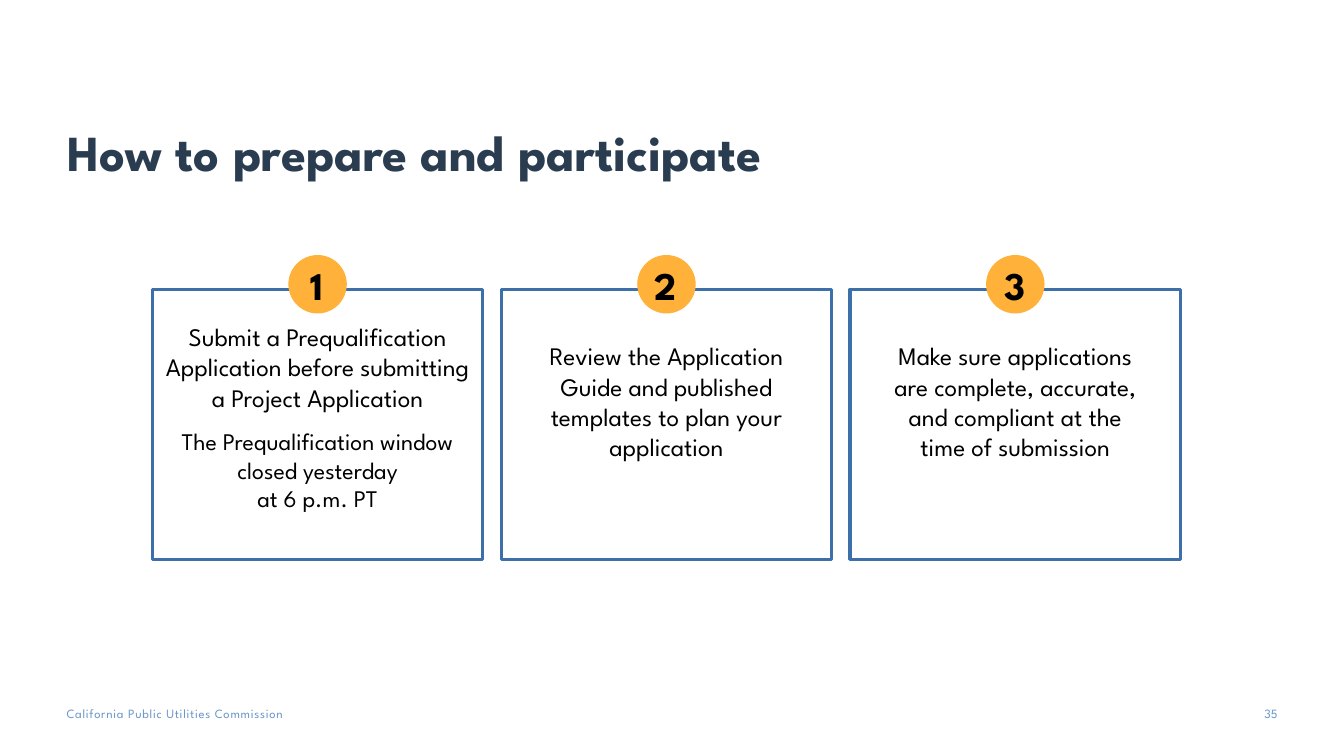
from pptx import Presentation
from pptx import util as u
from pptx.dml import color
from pptx.enum import shapes, text

FONT = "League Spartan"
STEPS = [
    (0, 3.14, 3.28, 2.37, [
        ("Submit a Prequalification Application before submitting a Project Application", 18, 0),
        ("The Prequalification window closed yesterday", 17, 10.5),
        ("at 6 p.m. PT", 17, 0)]),
    (0.28, 3.33, 2.72, 1.62, [
        ("Review the Application Guide and published templates to plan your application", 18, 0)]),
    (0.28, 3.33, 2.72, 1.92, [
        ("Make sure applications are complete, accurate, and compliant at the time of submission", 18, 0)]),
]


def rgb(code):
    return color.RGBColor.from_string(code)


def place(item, box):
    item.left, item.top, item.width, item.height = map(u.Inches, box)


def write(item, lines, tint, align, pads, bold=False):
    frame = item.text_frame
    frame.word_wrap = True
    frame.auto_size = text.MSO_AUTO_SIZE.NONE
    (frame.margin_left, frame.margin_top,
     frame.margin_right, frame.margin_bottom) = map(u.Inches, pads)
    frame.text = "\n".join(line for line, size, gap in lines)
    for par, (line, size, gap) in zip(frame.paragraphs, lines):
        par.alignment = align
        par.space_before = u.Pt(gap)
        for run in par.runs:
            run.font.name = FONT
            run.font.size = u.Pt(size)
            run.font.bold = bold
            run.font.color.rgb = rgb(tint)


def label(slide, box, lines, tint, align, pads, bold=False):
    item = slide.shapes.add_textbox(*map(u.Inches, box))
    write(item, lines, tint, align, pads, bold)
    return item


def shape(slide, kind, box, fill=None, line=None):
    item = slide.shapes.add_shape(kind, *map(u.Inches, box))
    item.shadow.inherit = False
    if fill:
        item.fill.solid()
        item.fill.fore_color.rgb = rgb(fill)
    else:
        item.fill.background()
    if line:
        item.line.color.rgb = rgb(line)
        item.line.width = u.Pt(2.25)
    else:
        item.line.fill.background()


def head(slide, box):
    title = slide.shapes.title
    place(title, box)
    write(title, [("How to prepare and participate", 36, 0)], "2A3C50",
          text.PP_ALIGN.LEFT, (0, 0.05, 0.1, 0.05), True)
    title.text_frame.vertical_anchor = text.MSO_ANCHOR.BOTTOM


def foot(slide, box):
    left, top, width, height = box
    pads = (0, 0, 0, 0)
    name = label(slide, (left, top, 3.21, height),
                 [("California Public Utilities Commission", 9, 0)],
                 "6996C9", text.PP_ALIGN.LEFT, pads)
    name.text_frame.paragraphs[0].runs[0].font._element.set("spc", "50")
    label(slide, (left + width - 0.42, top, 0.42, height), [("35", 9, 0)],
          "6996C9", text.PP_ALIGN.RIGHT, pads)


def card(slide, box, number, step):
    left, top, width, height = box
    inset, start, wide, tall, lines = step
    mid = left + width / 2
    shape(slide, shapes.MSO_SHAPE.RECTANGLE, box, line="3D6FA9")
    shape(slide, shapes.MSO_SHAPE.OVAL, (mid - 0.29, top - 0.34, 0.58, 0.58), fill="FFB13A")
    digit = label(slide, (mid - 0.24, top - 0.33, 0.47, 0.58), [(str(number), 28, 0)],
                  "000000", text.PP_ALIGN.CENTER, (0.06,) * 4, True)
    digit.text_frame.vertical_anchor = text.MSO_ANCHOR.MIDDLE
    label(slide, (left + inset, start, wide, tall), lines, "000000",
          text.PP_ALIGN.CENTER, (0.1, 0.05, 0.1, 0.05))


def main():
    deck = Presentation()
    deck.slide_width = u.Inches(13.33)
    deck.slide_height = u.Inches(7.5)
    slide = deck.slides.add_slide(deck.slide_layouts[5])
    head(slide, (0.67, 0.4, 12, 1.45))
    for index, step in enumerate(STEPS):
        card(slide, (1.51 + 3.46 * index, 2.87, 3.28, 2.68), index + 1, step)
    foot(slide, (0.66, 7, 12.01, 0.2))
    deck.save("out.pptx")


if __name__ == "__main__":
    main()
